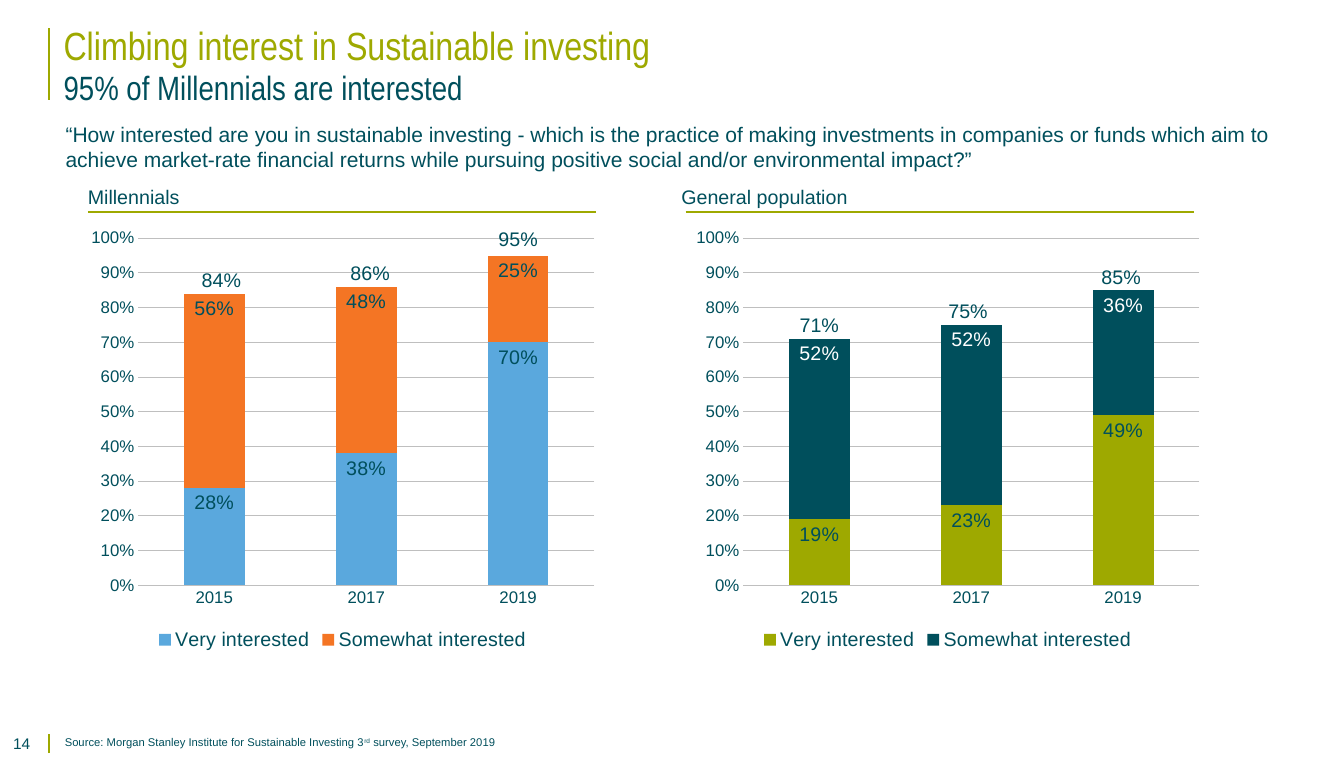
from dataclasses import dataclass

import pptx
import pptx.chart.data
import pptx.dml.color
import pptx.enum.chart
import pptx.enum.shapes
import pptx.enum.text
import pptx.util
from lxml import etree
from pptx.util import Cm


@dataclass(frozen=True)
class Theme:
    petrol: str = "004F5C"
    lime: str = "9EA900"
    blue: str = "5AA8DD"
    orange: str = "F47524"
    white: str = "FFFFFF"
    grid: str = "BFBFBF"
    body: str = "Arial"
    narrow: str = "Arial Narrow"
    title: int = 28
    subtitle: int = 24
    question: int = 15
    label: int = 14
    axis: int = 12
    page: int = 11
    source: int = 8


T = Theme()
PERCENT = '#,##0"%"'
YEARS = ["2015", "2017", "2019"]
WIDE_INSETS = (0.33, 0.18)

# Chart frame and plot area, in cm
CHART_Y, CHART_W, CHART_H = 5.56, 13.18, 10.92
PLOT = {"x": 0.11, "y": 0.04, "w": 0.87, "h": 0.8}  # shares of the frame


def rgb(color):
    return pptx.dml.color.RGBColor.from_string(color)


def set_font(font, size, color=T.petrol, name=T.body):
    font.size = pptx.util.Pt(size)
    font.name = name
    font.color.rgb = rgb(color)


def add_text(s, text, x, y, w, h, size=T.label, color=T.petrol, name=T.body,
             align="LEFT", anchor="TOP", insets=(0.25, 0.13), wrap=True):
    """Add a text box; text is a string or a list of (text, baseline) runs."""
    sp = s.shapes.add_textbox(Cm(x), Cm(y), Cm(w), Cm(h))
    tf = sp.text_frame
    tf.word_wrap = wrap
    tf.vertical_anchor = getattr(pptx.enum.text.MSO_ANCHOR, anchor)
    tf.margin_left = tf.margin_right = Cm(insets[0])
    tf.margin_top = tf.margin_bottom = Cm(insets[1])
    p = tf.paragraphs[0]
    p.alignment = getattr(pptx.enum.text.PP_ALIGN, align)
    for run_text, baseline in [(text, 0)] if isinstance(text, str) else text:
        r = p.add_run()
        r.text = run_text
        set_font(r.font, size, color, name)
        if baseline:
            r._r.get_or_add_rPr().set("baseline", str(baseline * 1000))
    return sp


def add_rule(s, x1, y1, x2, y2):
    line = s.shapes.add_connector(pptx.enum.shapes.MSO_CONNECTOR.STRAIGHT,
                                  Cm(x1), Cm(y1), Cm(x2), Cm(y2))
    line.line.color.rgb = rgb(T.lime)
    line.line.width = pptx.util.Pt(1.5)
    etree.SubElement(line._element.spPr, pptx.oxml.ns.qn("a:effectLst"))


def set_plot_layout(chart):
    plot_area = chart._chartSpace.chart.plotArea
    for old in plot_area.findall(pptx.oxml.ns.qn("c:layout")):
        plot_area.remove(old)
    layout = etree.Element(pptx.oxml.ns.qn("c:layout"))
    manual = etree.SubElement(layout, pptx.oxml.ns.qn("c:manualLayout"))
    settings = {"layoutTarget": "inner", "xMode": "edge", "yMode": "edge", **PLOT}
    for tag, value in settings.items():
        etree.SubElement(manual, pptx.oxml.ns.qn(f"c:{tag}")).set("val", str(value))
    plot_area.insert(0, layout)


def add_stacked_chart(s, x, series):
    """Add a stacked column chart; series rows are name, values, fill, label colour."""
    xl = pptx.enum.chart
    data = pptx.chart.data.CategoryChartData(number_format=PERCENT)
    data.categories = YEARS
    for name, values, _, _ in series:
        data.add_series(name, values)
    chart = s.shapes.add_chart(xl.XL_CHART_TYPE.COLUMN_STACKED, Cm(x), Cm(CHART_Y),
                               Cm(CHART_W), Cm(CHART_H), data).chart
    set_font(chart.font, T.axis)
    chart.has_title = False
    chart.has_legend = True
    chart.legend.position = xl.XL_LEGEND_POSITION.BOTTOM
    chart.legend.include_in_layout = False
    set_font(chart.legend.font, T.label)
    set_plot_layout(chart)

    # Axes
    for axis in (chart.category_axis, chart.value_axis):
        axis.major_tick_mark = axis.minor_tick_mark = xl.XL_TICK_MARK.NONE
        axis.format.line.fill.background()
        set_font(axis.tick_labels.font, T.axis)
    axis = chart.value_axis
    axis.minimum_scale, axis.maximum_scale, axis.major_unit = 0, 100, 10
    axis.tick_labels.number_format = PERCENT
    axis.tick_labels.number_format_is_linked = False
    axis.has_major_gridlines = True
    axis.major_gridlines.format.line.color.rgb = rgb(T.grid)
    axis.major_gridlines.format.line.width = pptx.util.Pt(0.75)

    # Columns and their labels
    plot = chart.plots[0]
    plot.gap_width, plot.overlap, plot.vary_by_categories = 150, 100, False
    for column, (_, _, fill, label_color) in zip(plot.series, series):
        column.invert_if_negative = False
        column.format.fill.solid()
        column.format.fill.fore_color.rgb = rgb(fill)
        labels = column.data_labels
        labels.show_value = True
        labels.position = xl.XL_LABEL_POSITION.INSIDE_END
        labels.number_format = PERCENT
        labels.number_format_is_linked = False
        set_font(labels.font, T.label, label_color)


def add_totals(s, x, series, nudges):
    """Write the sum of each column just above its top."""
    w, h, lift = 2.54, 0.86, 0.78
    totals = map(sum, zip(*(values for _, values, _, _ in series)))
    for i, (total, (dx, dy)) in enumerate(zip(totals, nudges)):
        centre = x + CHART_W * (PLOT["x"] + PLOT["w"] * (i + 0.5) / len(YEARS))
        top = CHART_Y + CHART_H * (PLOT["y"] + PLOT["h"] * (1 - total / 100))
        add_text(s, f"{total}%", centre - w / 2 + dx, top - lift + dy, w, h,
                 align="CENTER")


def add_panel(s, heading, x, heading_x, rule_x, series, nudges):
    add_stacked_chart(s, x, series)
    add_totals(s, x, series, nudges)
    add_text(s, heading, heading_x, 4.52, 4.72, 0.86, wrap=False)
    add_rule(s, rule_x, 5.33, rule_x + 12.78, 5.33)


def main():
    prs = pptx.Presentation()
    prs.slide_width, prs.slide_height = Cm(33.81), Cm(19.05)
    s = prs.slides.add_slide(prs.slide_layouts[6])

    # Header
    add_rule(s, 1.24, 2.51, 1.24, 0.71)
    add_text(s, "Climbing interest in Sustainable investing", 1.27, 0, 31.42, 2.26,
             size=T.title, color=T.lime, name=T.narrow, anchor="MIDDLE",
             insets=WIDE_INSETS)
    add_text(s, "95% of Millennials are interested", 1.27, 1.5, 31.42, 1.27,
             size=T.subtitle, name=T.narrow, insets=WIDE_INSETS)
    add_text(s, "“How interested are you in sustainable investing - which is the "
             "practice of making investments in companies or funds which aim to "
             "achieve market-rate financial returns while pursuing positive social "
             "and/or environmental impact?”", 1.4, 2.92, 31.7, 1.55, size=T.question)

    # Survey panels
    add_panel(s, "Millennials", 2.03, 1.96, 2.21,
              [("Very interested", (28, 38, 70), T.blue, T.petrol),
               ("Somewhat interested", (56, 48, 25), T.orange, T.petrol)],
              nudges=[(0.18, 0), (0.1, 0), (0, -0.08)])
    add_panel(s, "General population", 17.25, 16.89, 17.25,
              [("Very interested", (19, 23, 49), T.lime, T.petrol),
               ("Somewhat interested", (52, 52, 36), T.petrol, T.white)],
              nudges=[(0, 0), (-0.08, 0), (-0.05, 0)])

    # Footer
    add_text(s, "14", 0, 18.29, 6.5, 0.53, size=T.page, insets=WIDE_INSETS)
    add_rule(s, 1.24, 18.95, 1.24, 18.47)
    add_text(s, [("Source: Morgan Stanley Institute for Sustainable Investing 3", 0),
                 ("rd", 30), (" survey, September 2019", 0)],
             1.3, 18.34, 27.33, 0.71, size=T.source, insets=WIDE_INSETS)

    prs.save("out.pptx")


if __name__ == "__main__":
    main()
